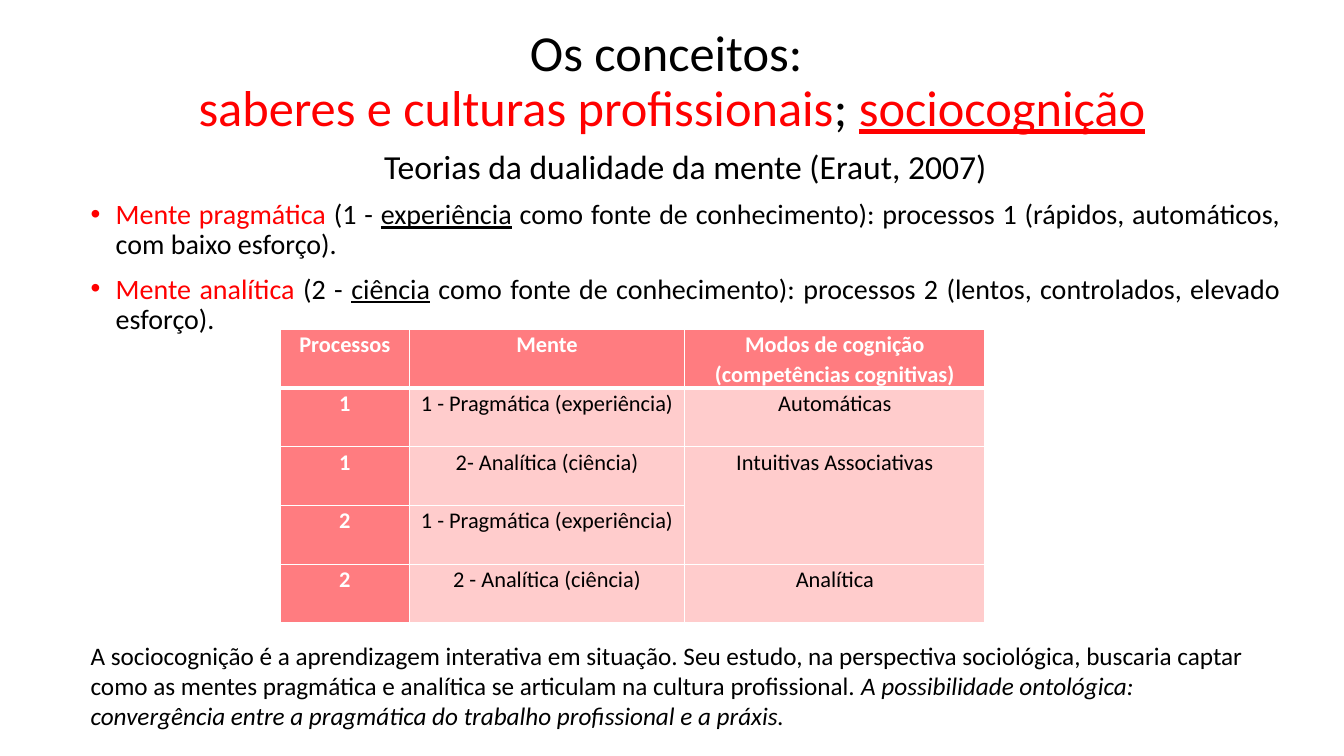
from lxml import etree
from pptx import Presentation, util as u
from pptx.dml.color import RGBColor
from pptx.enum import text
from pptx.oxml import ns

COLORS = {"ink": "000000", "accent": "FF0000", "paper": "FFFFFF",
          "strong": "FF7C80", "soft": "FFCCCC"}
ALIGN = text.PP_ALIGN


class SlideBuilder:
    """Holds the text style and the slide being filled."""

    def __init__(self, slide, font="Calibri"):
        self.slide = slide
        self.font = font

    def color(self, name):
        return RGBColor.from_string(COLORS[name])

    def add_span(self, para, words, size=18, color="ink", **marks):
        span = para.add_run()
        span.text = words
        span.font.name = self.font
        span.font.size = u.Pt(size)
        span.font.color.rgb = self.color(color)
        for mark, value in marks.items():
            setattr(span.font, mark, value)

    def format_para(self, para, align, spacing=None, before=0):
        para.alignment = align
        para.line_spacing = spacing
        para.space_before = u.Pt(before)

    def add_bullet(self, para, color, indent=18):
        props = para._p.get_or_add_pPr()
        props.set("marL", str(u.Pt(indent)))
        props.set("indent", str(u.Pt(-indent)))
        bullet_color = etree.SubElement(props, ns.qn("a:buClr"))
        etree.SubElement(bullet_color, ns.qn("a:srgbClr"), val=COLORS[color])
        etree.SubElement(props, ns.qn("a:buFont"), typeface="Arial")
        etree.SubElement(props, ns.qn("a:buChar"), char="•")

    def place_title(self, left, top, width, height):
        title = self.slide.shapes.title
        title.left, title.top = u.Pt(left), u.Pt(top)
        title.width, title.height = u.Pt(width), u.Pt(height)
        frame = title.text_frame
        frame.auto_size = text.MSO_AUTO_SIZE.NONE
        frame.vertical_anchor = text.MSO_ANCHOR.MIDDLE
        return frame.paragraphs[0]

    def add_text_box(self, left, top, width, height):
        box = self.slide.shapes.add_textbox(
            u.Pt(left), u.Pt(top), u.Pt(width), u.Pt(height))
        box.text_frame.word_wrap = True
        return box.text_frame

    def add_borders(self, cell, bottom):
        props = cell._tc.get_or_add_tcPr()
        sides = {"lnL": 1, "lnR": 1, "lnT": 1, "lnB": bottom}
        for position, (side, width) in enumerate(sides.items()):
            line = etree.Element(ns.qn(f"a:{side}"), w=str(u.Pt(width)))
            fill = etree.SubElement(line, ns.qn("a:solidFill"))
            etree.SubElement(fill, ns.qn("a:srgbClr"), val=COLORS["paper"])
            props.insert(position, line)

    def fill_cell(self, cell, words, heading, bottom):
        cell.margin_left = cell.margin_right = u.Pt(5)
        cell.margin_top = cell.margin_bottom = 0
        cell.fill.solid()
        cell.fill.fore_color.rgb = self.color("strong" if heading else "soft")
        self.add_borders(cell, bottom)
        para = cell.text_frame.paragraphs[0]
        self.format_para(para, ALIGN.CENTER, 1.07)
        if words:
            self.add_span(para, words, 16, "paper" if heading else "ink",
                          bold=heading)

    def add_table(self, left, top, widths, row_height, rows):
        table = self.slide.shapes.add_table(
            len(rows), len(widths), u.Pt(left), u.Pt(top),
            u.Pt(sum(widths)), u.Pt(row_height * len(rows))).table
        table.first_row = table.horz_banding = False
        for column, width in zip(table.columns, widths):
            column.width = u.Pt(width)
        for r, row in enumerate(rows):
            table.rows[r].height = u.Pt(row_height)
            for c, words in enumerate(row):
                self.fill_cell(table.cell(r, c), words, r == 0 or c == 0,
                               3 if r == 0 else 1)
        return table


def main():
    deck = Presentation()
    deck.slide_width, deck.slide_height = u.Pt(960), u.Pt(540)
    page = SlideBuilder(deck.slides.add_slide(deck.slide_layouts[5]))

    # Title
    para = page.place_title(66, 20, 828, 78)
    page.format_para(para, ALIGN.CENTER, 0.9)
    page.add_span(para, "Os conceitos: ", 36)
    para.add_line_break()
    page.add_span(para, "saberes e culturas profissionais", 36, "accent")
    page.add_span(para, "; ", 36)
    page.add_span(para, "sociocognição", 36, "accent", underline=True)

    # Theory heading and the two minds
    frame = page.add_text_box(57.6, 103.7, 864, 403)
    para = frame.paragraphs[0]
    page.format_para(para, ALIGN.CENTER, 0.9, 10)
    page.add_span(para, "Teorias da dualidade da mente (Eraut, 2007)", 24)
    minds = [
        ("Mente pragmática ", "(1 - ", "experiência",
         " como fonte de conhecimento): processos 1 "
         "(rápidos, automáticos, com baixo esforço)."),
        ("Mente analítica ", "(2 - ", "ciência",
         " como fonte de conhecimento): processos 2 "
         "(lentos, controlados, elevado esforço)."),
    ]
    for name, number, source, processes in minds:
        para = frame.add_paragraph()
        page.format_para(para, ALIGN.JUSTIFY, 0.9, 10)
        page.add_bullet(para, "accent")
        page.add_span(para, name, 20, "accent")
        page.add_span(para, number, 20)
        page.add_span(para, source, 20, underline=True)
        page.add_span(para, processes, 20)

    # Table of processes, minds and modes of cognition
    table = page.add_table(200.2, 235.4, [92.2, 196.6, 214.6], 41.9, [
        ("Processos", "Mente", "Modos de cognição (competências cognitivas)"),
        ("1", "1 - Pragmática (experiência)", "Automáticas"),
        ("1", "2- Analítica (ciência)", "Intuitivas Associativas"),
        ("2", "1 - Pragmática (experiência)", ""),
        ("2", "2 - Analítica (ciência)", "Analítica"),
    ])
    table.cell(2, 2).merge(table.cell(3, 2))

    # Closing remark
    para = page.add_text_box(57.6, 453.6, 853.2, 94.3).paragraphs[0]
    page.format_para(para, ALIGN.LEFT)
    page.add_span(
        para, "A sociocognição é a aprendizagem interativa em situação. "
        "Seu estudo, na perspectiva sociológica, buscaria captar como as "
        "mentes pragmática e analítica se articulam na cultura profissional. ")
    page.add_span(
        para, "A possibilidade ontológica: convergência entre a pragmática "
        "do trabalho profissional e a práxis.", italic=True)

    deck.save("out.pptx")


if __name__ == "__main__":
    main()
